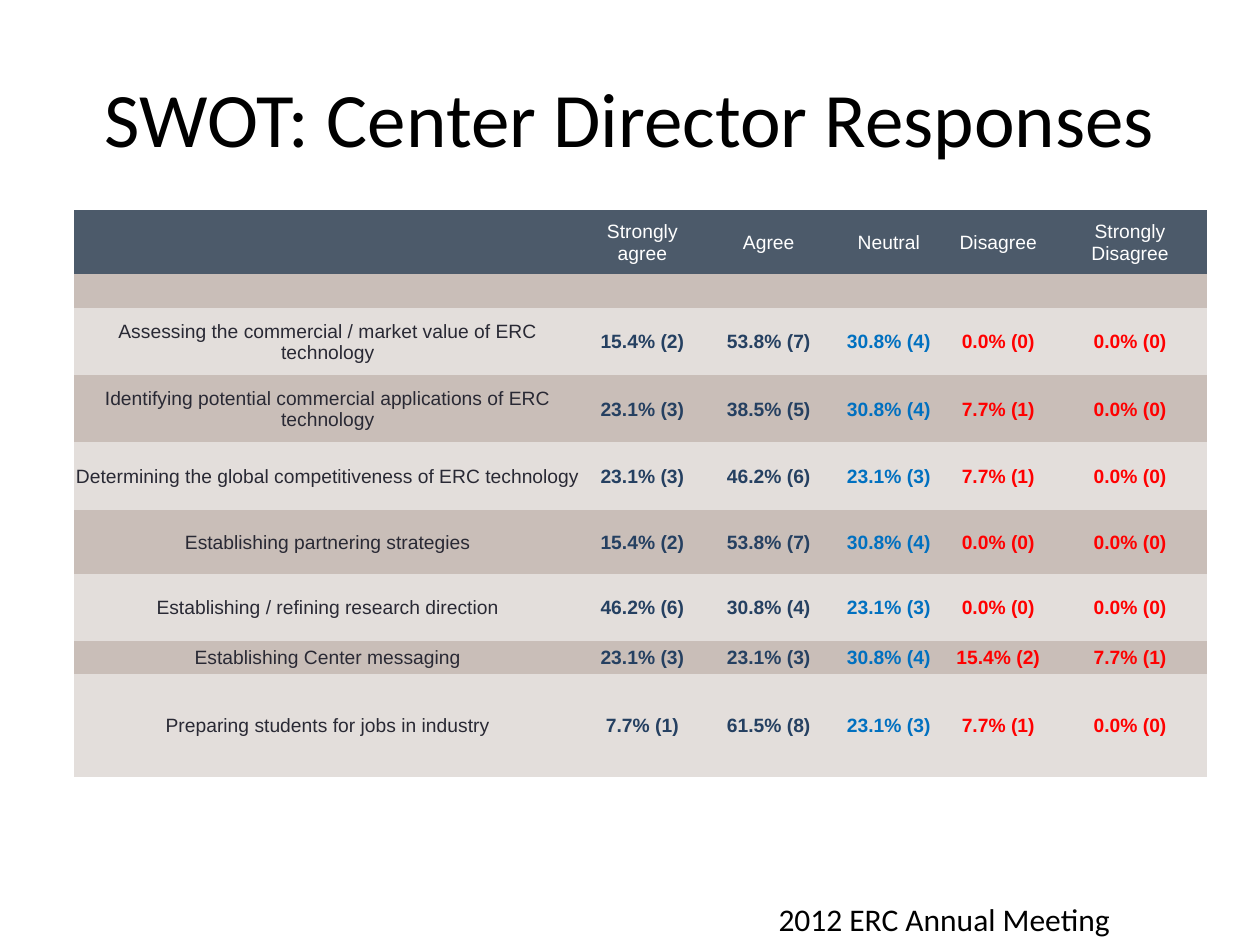
from lxml.etree import SubElement
from pptx import Presentation
from pptx.dml.color import RGBColor
from pptx.enum.text import MSO_ANCHOR as Anchor, PP_ALIGN as Align
from pptx.oxml.ns import qn
from pptx.util import Pt

BLACK = RGBColor(0x00, 0x00, 0x00)
WHITE = RGBColor(0xFF, 0xFF, 0xFF)
SLATE = RGBColor(0x4C, 0x5A, 0x6A)
DARK_BAND = RGBColor(0xC9, 0xBE, 0xB8)
LIGHT_BAND = RGBColor(0xE3, 0xDE, 0xDB)
INK = RGBColor(0x29, 0x29, 0x34)
NAVY = RGBColor(0x25, 0x40, 0x61)
BLUE = RGBColor(0x00, 0x70, 0xC0)
RED = RGBColor(0xFF, 0x00, 0x00)

NO_STYLE_NO_GRID = "{2D5ABB26-0587-4C30-8999-92F81FD0307C}"
COLUMN_WIDTHS = [290.6, 69, 75.4, 61.9, 63.2, 87.5]
COLUMN_COLORS = [INK, NAVY, NAVY, BLUE, RED, RED]
ROW_HEIGHTS = [36.6, 19.3, 38.5, 38.5, 38.5, 36.4, 38.5, 19.1, 58.7]
ROWS = [
    ["", "Strongly agree", "Agree", "Neutral", "Disagree", "Strongly Disagree"],
    [""] * 6,
    ["Assessing the commercial / market value of ERC technology",
     "15.4% (2)", "53.8% (7)", "30.8% (4)", "0.0% (0)", "0.0% (0)"],
    ["Identifying potential commercial applications of ERC technology",
     "23.1% (3)", "38.5% (5)", "30.8% (4)", "7.7% (1)", "0.0% (0)"],
    ["Determining the global competitiveness of ERC technology",
     "23.1% (3)", "46.2% (6)", "23.1% (3)", "7.7% (1)", "0.0% (0)"],
    ["Establishing partnering strategies",
     "15.4% (2)", "53.8% (7)", "30.8% (4)", "0.0% (0)", "0.0% (0)"],
    ["Establishing / refining research direction",
     "46.2% (6)", "30.8% (4)", "23.1% (3)", "0.0% (0)", "0.0% (0)"],
    ["Establishing Center messaging",
     "23.1% (3)", "23.1% (3)", "30.8% (4)", "15.4% (2)", "7.7% (1)"],
    ["Preparing students for jobs in industry",
     "7.7% (1)", "61.5% (8)", "23.1% (3)", "7.7% (1)", "0.0% (0)"],
]


def format_paragraph(para, font_name, size, color, bold=False):
    para.font.name = font_name
    para.font.size = Pt(size)
    para.font.color.rgb = color
    para.font.bold = bold


deck = Presentation()
deck.slide_width, deck.slide_height = Pt(720), Pt(540)
page = deck.slides.add_slide(deck.slide_layouts[5])

title = page.shapes.title
title.left, title.top, title.width, title.height = Pt(36), Pt(21.6), Pt(648), Pt(90)
title.text_frame.text = "SWOT: Center Director Responses"
title.text_frame.vertical_anchor = Anchor.MIDDLE
title_para = title.text_frame.paragraphs[0]
title_para.alignment = Align.CENTER
format_paragraph(title_para, "Calibri", 44, BLACK)

frame = page.shapes.add_table(len(ROWS), len(COLUMN_WIDTHS), Pt(42), Pt(120),
                              Pt(sum(COLUMN_WIDTHS)), Pt(sum(ROW_HEIGHTS)))
responses = frame.table
responses.horz_banding = False
responses._tbl.tblPr.find(qn("a:tableStyleId")).text = NO_STYLE_NO_GRID
for column, width in zip(responses.columns, COLUMN_WIDTHS):
    column.width = Pt(width)

for row_index, (labels, height) in enumerate(zip(ROWS, ROW_HEIGHTS)):
    responses.rows[row_index].height = Pt(height)
    is_header = row_index == 0
    band = SLATE if is_header else DARK_BAND if row_index % 2 else LIGHT_BAND
    for column_index, label in enumerate(labels):
        cell = responses.cell(row_index, column_index)
        cell.fill.solid()
        cell.fill.fore_color.rgb = band
        cell.vertical_anchor = Anchor.MIDDLE
        cell.margin_left = cell.margin_right = cell.margin_top = Pt(0.72)
        cell.margin_bottom = Pt(0)
        if label:
            cell.text_frame.text = label
            para = cell.text_frame.paragraphs[0]
            para.alignment = Align.CENTER
            color = WHITE if is_header else COLUMN_COLORS[column_index]
            format_paragraph(para, "Arial", 11, color, not is_header and column_index > 0)
        else:
            SubElement(cell.text_frame.paragraphs[0]._p, qn("a:endParaRPr"), sz="1100")

footer = page.shapes.add_textbox(Pt(437.8), Pt(511), Pt(210), Pt(29))
footer.text_frame.word_wrap = False
footer.text_frame.text = "2012 ERC Annual Meeting"
format_paragraph(footer.text_frame.paragraphs[0], "Calibri", 18, BLACK)

deck.save("out.pptx")
